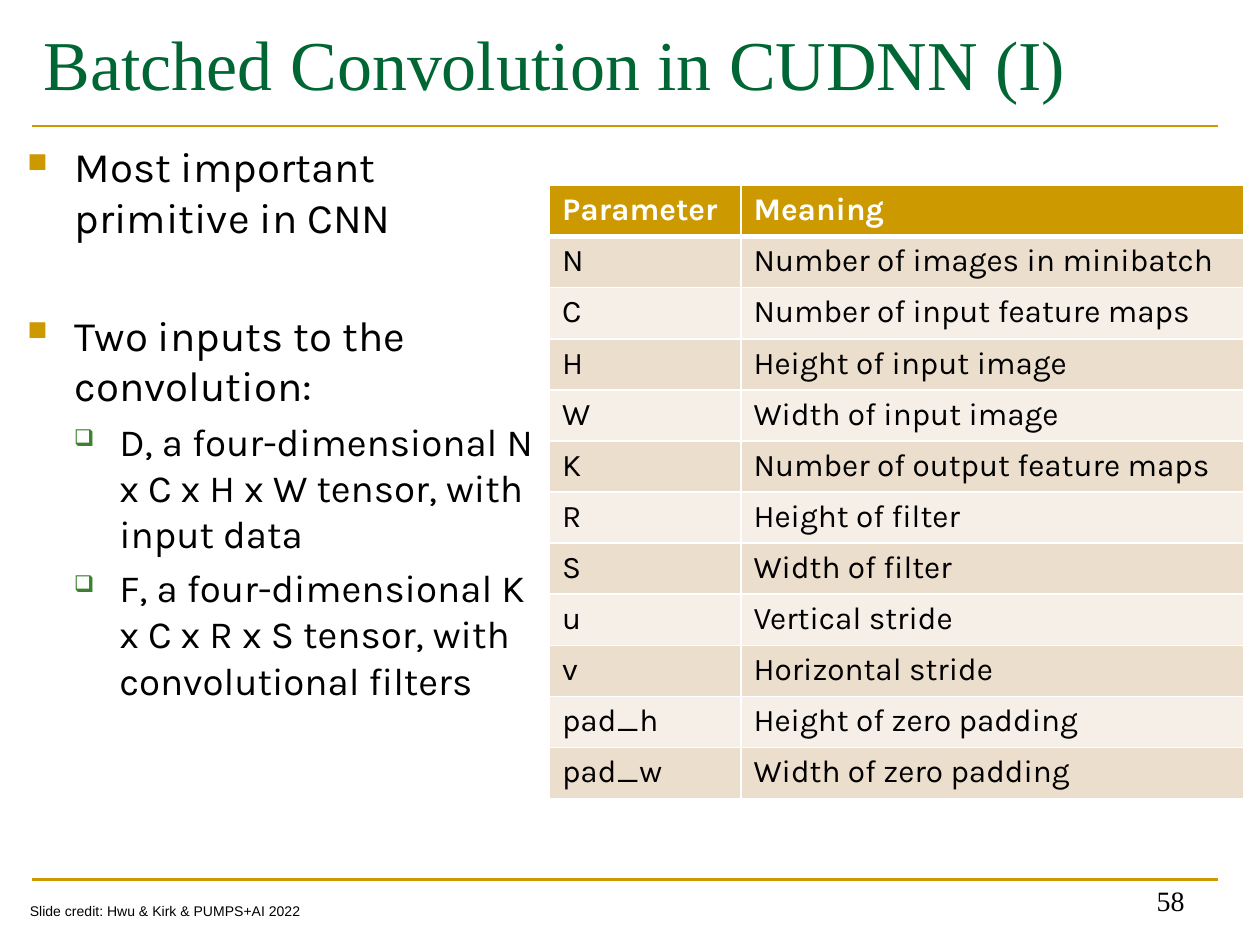
from lxml import etree
from pptx import Presentation
from pptx.dml.color import RGBColor
from pptx.enum.shapes import MSO_CONNECTOR
from pptx.enum.text import MSO_ANCHOR, PP_ALIGN
from pptx.oxml.ns import qn
from pptx.util import Pt

STRAIGHT = MSO_CONNECTOR.STRAIGHT
TOP, MIDDLE, BOTTOM = MSO_ANCHOR.TOP, MSO_ANCHOR.MIDDLE, MSO_ANCHOR.BOTTOM
LEFT, RIGHT = PP_ALIGN.LEFT, PP_ALIGN.RIGHT

COLORS = {
    "gold": "CC9900", "title": "006633", "green": "3B812F", "text": "000000",
    "white": "FFFFFF", "dark band": "ECDECC", "light band": "F6EFE7",
}
SERIF, BODY, SANS = "Times New Roman", "Karla", "Arial"

TITLE = "Batched Convolution in CUDNN (I)"
CREDIT = "Slide credit: Hwu & Kirk & PUMPS+AI 2022"
PAGE_NUMBER = "58"

# level, space before, text
BULLETS = [
    (0, 5, "Most important primitive in CNN"),
    (0, 38.5, "Two inputs to the convolution:"),
    (1, 4.5, "D, a four-dimensional N x C x H x W tensor, with input data"),
    (1, 4.5, "F, a four-dimensional K x C x R x S tensor, with convolutional filters"),
]
LEVELS = [
    {"size": 24, "margin": 27, "indent": -27, "mark": "■", "color": "gold", "percent": 65},
    {"size": 22, "margin": 52.5, "indent": -26, "mark": "❑", "color": "green", "percent": 60},
]
PARAMETERS = [
    ("Parameter", "Meaning"),
    ("N", "Number of images in minibatch"),
    ("C", "Number of input feature maps"),
    ("H", "Height of input image"),
    ("W", "Width of input image"),
    ("K", "Number of output feature maps"),
    ("R", "Height of filter"),
    ("S", "Width of filter"),
    ("u", "Vertical stride"),
    ("v", "Horizontal stride"),
    ("pad_h", "Height of zero padding"),
    ("pad_w", "Width of zero padding"),
]
COLUMN_WIDTHS = (109.4, 287.3)
ROW_HEIGHT = 29.2
RULE_LEFT, RULE_RIGHT = 18, 696.3
RULE_HEIGHTS = (72, 502.5)


def rgb(name):
    return RGBColor.from_string(COLORS[name])


def add_span(para, text, size, font, color="text", bold=False):
    span = para.add_run()
    span.text = text
    span.font.size = Pt(size)
    span.font.name = font
    span.font.bold = bold
    span.font.color.rgb = rgb(color)


def add_box(page, left, top, width, height, anchor=TOP, wrap=True):
    box = page.shapes.add_textbox(Pt(left), Pt(top), Pt(width), Pt(height))
    frame = box.text_frame
    frame.word_wrap = wrap
    frame.vertical_anchor = anchor
    return frame


def add_line_of_text(page, place, text, size, font, color="text",
                     anchor=TOP, align=LEFT, wrap=True):
    para = add_box(page, *place, anchor, wrap).paragraphs[0]
    para.alignment = align
    add_span(para, text, size, font, color)


def add_rule(page, height):
    rule = page.shapes.add_connector(
        STRAIGHT, Pt(RULE_LEFT), Pt(height), Pt(RULE_RIGHT), Pt(height))
    rule.line.color.rgb = rgb("gold")
    rule.line.width = Pt(1.5)
    etree.SubElement(rule.element.spPr, qn("a:effectLst"))


def set_bullet(para, level):
    props = para._p.get_or_add_pPr()
    props.set("marL", str(Pt(level["margin"])))
    props.set("indent", str(Pt(level["indent"])))
    color = etree.SubElement(props, qn("a:buClr"))
    etree.SubElement(color, qn("a:srgbClr"), val=COLORS[level["color"]])
    etree.SubElement(props, qn("a:buSzPct"), val=str(level["percent"] * 1000))
    etree.SubElement(props, qn("a:buChar"), char=level["mark"])


def add_bullets(page):
    frame = add_box(page, 8.6, 77, 305.3, 408)
    for index, (depth, space, text) in enumerate(BULLETS):
        para = frame.add_paragraph() if index else frame.paragraphs[0]
        level = LEVELS[depth]
        para.level = depth
        para.space_before = Pt(space)
        set_bullet(para, level)
        add_span(para, text, level["size"], BODY)


def set_borders(cell, widths):
    """Draw white borders; widths are given for left, right, top, bottom."""
    props = cell._tc.get_or_add_tcPr()
    for side, width in zip("LRTB", widths):
        border = etree.SubElement(props, qn(f"a:ln{side}"), w=str(Pt(width)))
        fill = etree.SubElement(border, qn("a:solidFill"))
        etree.SubElement(fill, qn("a:srgbClr"), val=COLORS["white"])


def add_parameter_table(page):
    table = page.shapes.add_table(
        len(PARAMETERS), len(COLUMN_WIDTHS), Pt(314), Pt(106),
        Pt(sum(COLUMN_WIDTHS)), Pt(ROW_HEIGHT * len(PARAMETERS))).table
    for column, width in zip(table.columns, COLUMN_WIDTHS):
        column.width = Pt(width)
    for r, texts in enumerate(PARAMETERS):
        table.rows[r].height = Pt(ROW_HEIGHT)
        header = r == 0
        band = "gold" if header else ("dark band" if r % 2 else "light band")
        for c, text in enumerate(texts):
            cell = table.cell(r, c)
            set_borders(cell, (1, 1, 3 if r == 1 else 1, 3 if header else 1))
            cell.fill.solid()
            cell.fill.fore_color.rgb = rgb(band)
            add_span(cell.text_frame.paragraphs[0], text, 18, BODY,
                     "white" if header else "text", header)


def main():
    deck = Presentation()
    deck.slide_width, deck.slide_height = Pt(720), Pt(540)
    page = deck.slides.add_slide(deck.slide_layouts[6])
    for height in RULE_HEIGHTS:
        add_rule(page, height)
    add_line_of_text(page, (18, 0, 678.3, 71.3), TITLE, 40, SERIF, "title", MIDDLE)
    add_bullets(page)
    add_parameter_table(page)
    add_line_of_text(page, (516.2, 491.8, 167.8, 36), PAGE_NUMBER, 16, SERIF,
                     anchor=BOTTOM, align=RIGHT)
    add_line_of_text(page, (10, 512, 170.6, 17), CREDIT, 8, SANS, wrap=False)
    deck.save("out.pptx")


if __name__ == "__main__":
    main()
